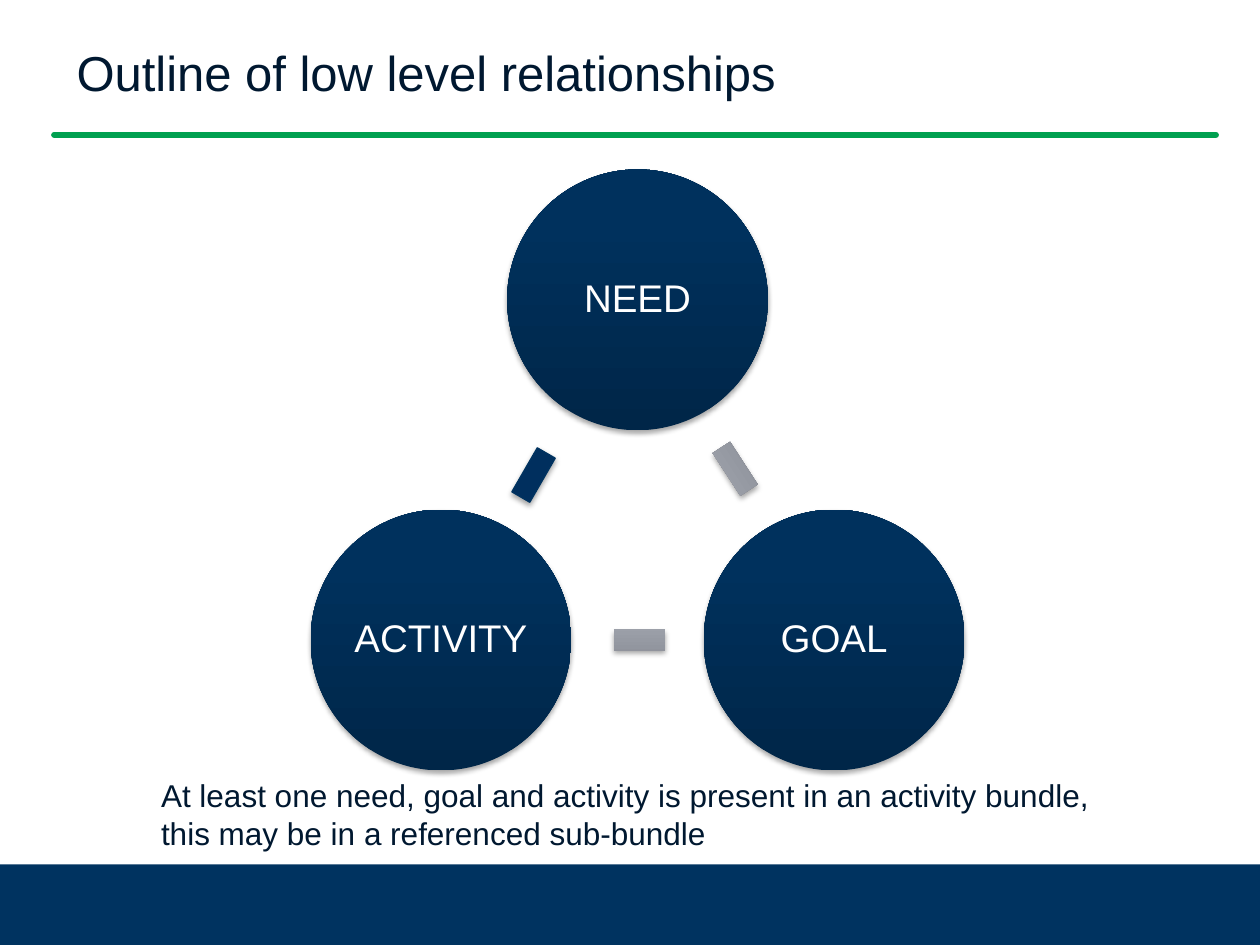
from dataclasses import dataclass

from lxml import etree
from pptx import Presentation
from pptx.dml.color import RGBColor
from pptx.enum.shapes import MSO_CONNECTOR, MSO_SHAPE
from pptx.enum.text import MSO_ANCHOR, PP_ALIGN
from pptx.oxml.ns import qn
from pptx.util import Inches, Pt

RECTANGLE = MSO_SHAPE.RECTANGLE
OVAL = MSO_SHAPE.OVAL
MINUS = MSO_SHAPE.MATH_MINUS
STRAIGHT = MSO_CONNECTOR.STRAIGHT
CENTER = PP_ALIGN.CENTER
MIDDLE = MSO_ANCHOR.MIDDLE


@dataclass(frozen=True)
class Theme:
    font: str = "Arial"
    title_size: int = 28
    label_size: int = 22
    note_size: int = 18
    ink: str = "001830"
    white: str = "FFFFFF"
    band: str = "003360"
    rule: str = "00A050"
    link: str = "002F5E"
    navy: tuple = ((0, "002648"), (80, "00315D"), (100, "00325D"))
    grey: tuple = ((0, "7E8189"), (80, "A4A8B2"), (100, "A5A8B4"))


class SlideBuilder:
    def __init__(self, page, theme):
        self.page = page
        self.theme = theme

    def shape(self, kind, left, top, width, height, fill, line=None):
        shape = self.page.shapes.add_shape(
            kind, Inches(left), Inches(top), Inches(width), Inches(height))
        shape.shadow.inherit = False
        if isinstance(fill, tuple):
            self.gradient(shape, fill)
        else:
            shape.fill.solid()
            shape.fill.fore_color.rgb = RGBColor.from_string(fill)
        if line:
            shape.line.color.rgb = RGBColor.from_string(line)
            shape.line.width = Pt(0.75)
        else:
            shape.line.fill.background()
        return shape

    def gradient(self, shape, stops):
        shape.fill.gradient()
        shape.fill.gradient_angle = 90
        stop_list = shape._element.spPr.find(".//" + qn("a:gsLst"))
        for stop in list(stop_list):
            stop_list.remove(stop)
        for position, color in stops:
            stop = etree.SubElement(stop_list, qn("a:gs"), pos=str(position * 1000))
            etree.SubElement(stop, qn("a:srgbClr"), val=color)

    def soft_shadow(self, shape):
        effects = shape._element.spPr.find(qn("a:effectLst"))
        shadow = etree.SubElement(
            effects, qn("a:outerShdw"), blurRad=str(Pt(3.1)), dist=str(Pt(1.8)),
            dir="5400000", rotWithShape="0")
        color = etree.SubElement(shadow, qn("a:srgbClr"), val="000000")
        etree.SubElement(color, qn("a:alpha"), val="35000")

    def format_text(self, para, size, color):
        for span in para.runs:
            span.font.name = self.theme.font
            span.font.size = Pt(size)
            span.font.color.rgb = RGBColor.from_string(color)

    def circle(self, label, center_x, center_y, size):
        circle = self.shape(OVAL, center_x - size / 2, center_y - size / 2,
                            size, size, self.theme.navy)
        self.soft_shadow(circle)
        frame = circle.text_frame
        frame.text = label
        frame.vertical_anchor = MIDDLE
        frame.margin_left = frame.margin_right = Inches(0.03)
        frame.margin_top = frame.margin_bottom = Inches(0.03)
        para = frame.paragraphs[0]
        para.alignment = CENTER
        para.line_spacing = 0.9
        self.format_text(para, self.theme.label_size, self.theme.white)

    def link(self, left, top, rotation, fill, line=None):
        link = self.shape(MINUS, left, top, 0.55, 0.7, fill, line)
        link.rotation = rotation
        self.soft_shadow(link)

    def rule(self, left, right, top):
        rule = self.page.shapes.add_connector(
            STRAIGHT, Inches(left), Inches(top), Inches(right), Inches(top))
        rule.line.color.rgb = RGBColor.from_string(self.theme.rule)
        rule.line.width = Pt(3.5)
        rule.line._get_or_add_ln().set("cap", "rnd")
        etree.SubElement(rule._element.spPr, qn("a:effectLst"))

    def text(self, words, left, top, width, height, size, wrap=True):
        box = self.page.shapes.add_textbox(
            Inches(left), Inches(top), Inches(width), Inches(height))
        frame = box.text_frame
        frame.word_wrap = wrap
        frame.text = words
        for para in frame.paragraphs:
            self.format_text(para, size, self.theme.ink)


def main():
    deck = Presentation()
    deck.slide_width, deck.slide_height = Inches(10), Inches(7.5)
    theme = Theme()
    builder = SlideBuilder(deck.slides.add_slide(deck.slide_layouts[6]), theme)

    builder.shape(RECTANGLE, 0, 6.86, 10, 0.64, theme.band)
    builder.rule(0.43, 9.65, 1.07)

    middle, spread, upper, lower = 5.06, 1.56, 2.38, 5.08
    for label, center_x, center_y in (
        ("NEED", middle, upper),
        ("GOAL", middle + spread, lower),
        ("ACTIVITY", middle - spread, lower),
    ):
        builder.circle(label, center_x, center_y, 2.07)

    builder.link(5.56, 3.37, 237, theme.grey)
    builder.link(4.8, 4.73, 0, theme.grey)
    builder.link(3.96, 3.42, 300, theme.link, theme.band)

    builder.text("At least one need, goal and activity is present in an activity bundle,\n"
                 "this may be in a referenced sub-bundle",
                 1.18, 6.11, 7.63, 0.71, theme.note_size, wrap=False)
    builder.text("Outline of low level relationships",
                 0.51, 0.29, 8.98, 0.89, theme.title_size)
    deck.save("out.pptx")


if __name__ == "__main__":
    main()
